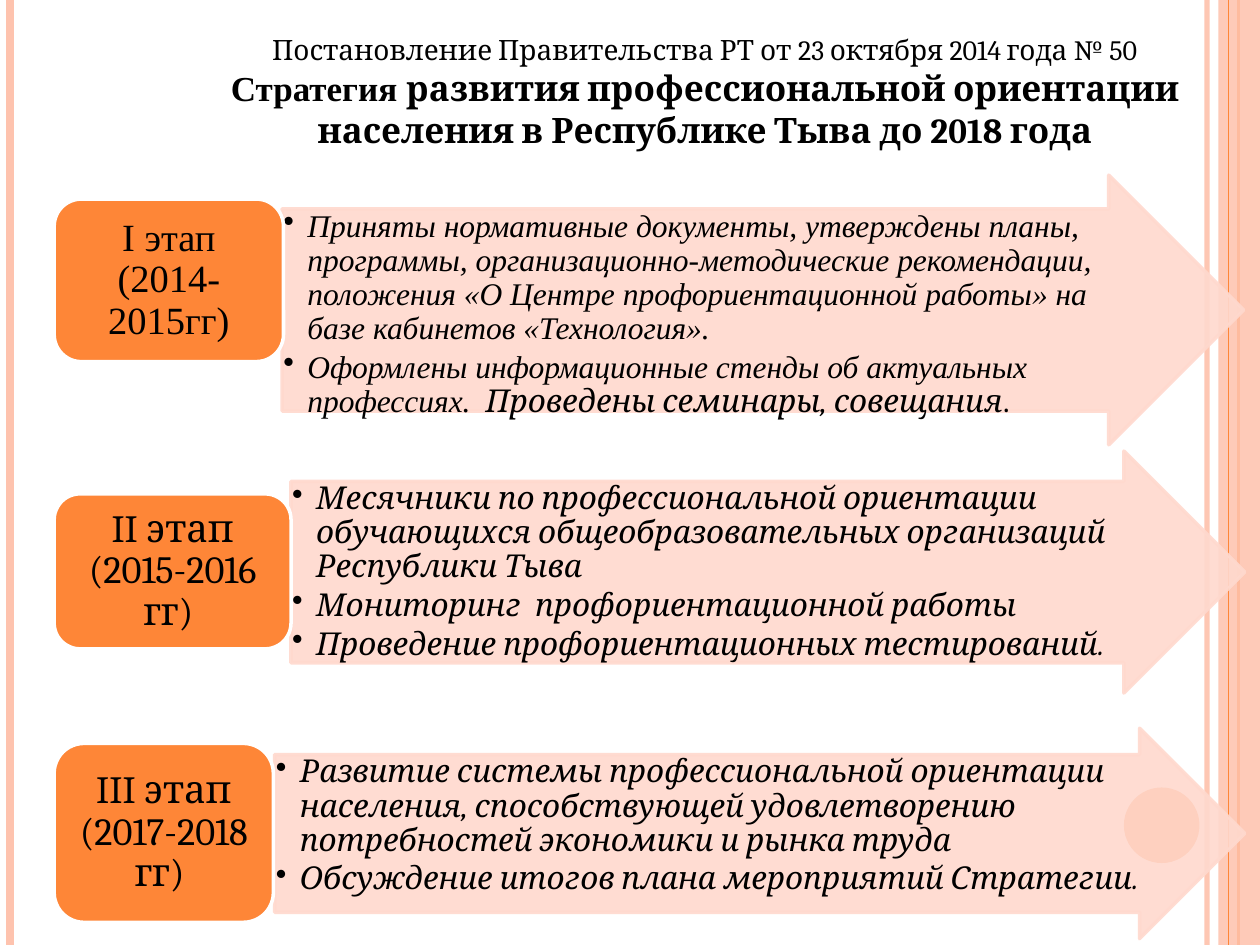
from lxml.etree import SubElement
from pptx import Presentation
from pptx.dml.color import RGBColor
from pptx.enum.shapes import MSO_CONNECTOR, MSO_SHAPE
from pptx.enum.text import MSO_ANCHOR, PP_ALIGN
from pptx.oxml.ns import qn
from pptx.util import Pt

PX = 9144  # 100 px to the inch
WIDTH, HEIGHT = 1000, 750
SERIF, TIMES = "Cambria", "Times New Roman"
COLORS = {"orange": "FE8637", "peach": "FEC3AE", "arrow": "FFD9CE",
          "white": "FFFFFF", "text": "000000"}

# Content: a paragraph is a list of (text, font, size, style) runs
TITLE = [
    [("Постановление Правительства РТ от 23 октября 2014 года № 50", SERIF, 16, "")],
    [("Стратегия ", TIMES, 20, "b"),
     ("развития профессиональной ориентации населения в Республике Тыва до 2018 года",
      SERIF, 20, "b")],
]
STAGES = [
    {"label": ("I этап (2014-2015гг)", TIMES, 22, ""),
     "box": (43, 158, 182, 129), "arrow": (224, 139, 763, 214),
     "points": [
         [("Приняты нормативные документы, утверждены планы, программы, "
           "организационно-методические рекомендации, положения «О Центре "
           "профориентационной работы» на базе кабинетов «Технология».", TIMES, 18, "i")],
         [("Оформлены информационные стенды об актуальных профессиях. ", TIMES, 18, "i"),
          (" Проведены семинары, совещания", SERIF, 18, "i"),
          (".", SERIF, 18, "")]]},
    {"label": ("II этап (2015-2016 гг) ", SERIF, 22, ""),
     "box": (43, 392, 188, 123), "arrow": (231, 358, 757, 192),
     "points": [
         [("Месячники по профессиональной ориентации обучающихся "
           "общеобразовательных организаций Республики Тыва", SERIF, 18, "i")],
         [("Мониторинг  профориентационной работы", SERIF, 18, "i")],
         [("Проведение профориентационных тестирований.", SERIF, 18, "i")]]},
    {"label": ("III этап (2017-2018 гг) ", SERIF, 22, ""),
     "box": (43, 590, 174, 142), "arrow": (218, 578, 770, 167),
     "points": [
         [("Развитие системы профессиональной ориентации населения, способствующей "
           "удовлетворению потребностей экономики и рынка труда", SERIF, 18, "i")],
         [("Обсуждение итогов плана мероприятий Стратегии.", SERIF, 18, "i")]]},
]
# Vertical rules: x, colour, line width, opacity in percent
RULES = [(958, "peach", 3, 93), (8, "peach", 4.5, 100), (983, "orange", 1.5, 100)]
INNER_RULE = (975, "orange", 0.75, 100)


def paint(color_format, color, opacity=100):
    color_format.rgb = RGBColor.from_string(COLORS[color])


def set_opacity(properties, opacity):
    if opacity < 100:
        for color in properties.iter(qn("a:srgbClr")):
            SubElement(color, qn("a:alpha"), val=str(opacity * 1000))


def add_rule(x, color, width, opacity):
    rule = slide.shapes.add_connector(MSO_CONNECTOR.STRAIGHT, x * PX, 0, x * PX, HEIGHT * PX)
    paint(rule.line.color, color)
    rule.line.width = Pt(width)
    properties = rule._element.spPr
    set_opacity(properties, opacity)
    SubElement(properties, qn("a:effectLst"))


def add_block(kind, bounds, fill, line=None, opacity=100):
    shape = slide.shapes.add_shape(kind, *(value * PX for value in bounds))
    shape.shadow.inherit = False
    shape.fill.solid()
    paint(shape.fill.fore_color, fill)
    if line:
        paint(shape.line.color, line)
        shape.line.width = Pt(2)
    else:
        shape.line.fill.background()
    set_opacity(shape._element.spPr, opacity)
    return shape


def write(shape, paragraphs, anchor, margins, align=PP_ALIGN.CENTER,
          spacing=None, after=0, bullets=False):
    frame = shape.text_frame
    frame.word_wrap = True
    frame.vertical_anchor = anchor
    frame.margin_left = frame.margin_right = margins[0] * PX
    frame.margin_top = frame.margin_bottom = margins[1] * PX
    for index, runs in enumerate(paragraphs):
        paragraph = frame.add_paragraph() if index else frame.paragraphs[0]
        paragraph.alignment = align
        paragraph.line_spacing = spacing
        paragraph.space_after = Pt(after)
        if bullets:
            paragraph.level = 1
            properties = paragraph._p.get_or_add_pPr()
            properties.set("marL", str(19 * PX))
            properties.set("indent", str(-19 * PX))
            SubElement(properties, qn("a:buChar"), char="•")
        for text, font, size, style in runs:
            run = paragraph.add_run()
            run.text = text
            run.font.name = font
            run.font.size = Pt(size)
            run.font.bold = "b" in style
            run.font.italic = "i" in style
            paint(run.font.color, "text")


presentation = Presentation()
presentation.slide_width, presentation.slide_height = WIDTH * PX, HEIGHT * PX
slide = presentation.slides.add_slide(presentation.slide_layouts[6])

# Side stripes and circle
for rule in RULES:
    add_rule(*rule)
add_block(MSO_SHAPE.RECTANGLE, (967, 0, 33, HEIGHT), "peach", opacity=87)
add_rule(*INNER_RULE)
add_block(MSO_SHAPE.OVAL, (892, 625, 60, 60), "orange")

# Stages: an arrow with points, then its label box
for stage in STAGES:
    arrow = add_block(MSO_SHAPE.RIGHT_ARROW, stage["arrow"], "arrow", "arrow", 90)
    arrow.adjustments[0], arrow.adjustments[1] = 0.75, 0.5
    write(arrow, stage["points"], MSO_ANCHOR.TOP, (1, 1), PP_ALIGN.LEFT, 0.9, 2.7, True)
    box = add_block(MSO_SHAPE.ROUNDED_RECTANGLE, stage["box"], "orange", "white")
    write(box, [[stage["label"]]], MSO_ANCHOR.MIDDLE, (9, 5), spacing=0.9, after=7.7)

# Title
title = slide.shapes.add_textbox(*(value * PX for value in (146, 21, 827, 104)))
write(title, TITLE, MSO_ANCHOR.TOP, (10, 5))

presentation.save("out.pptx")
